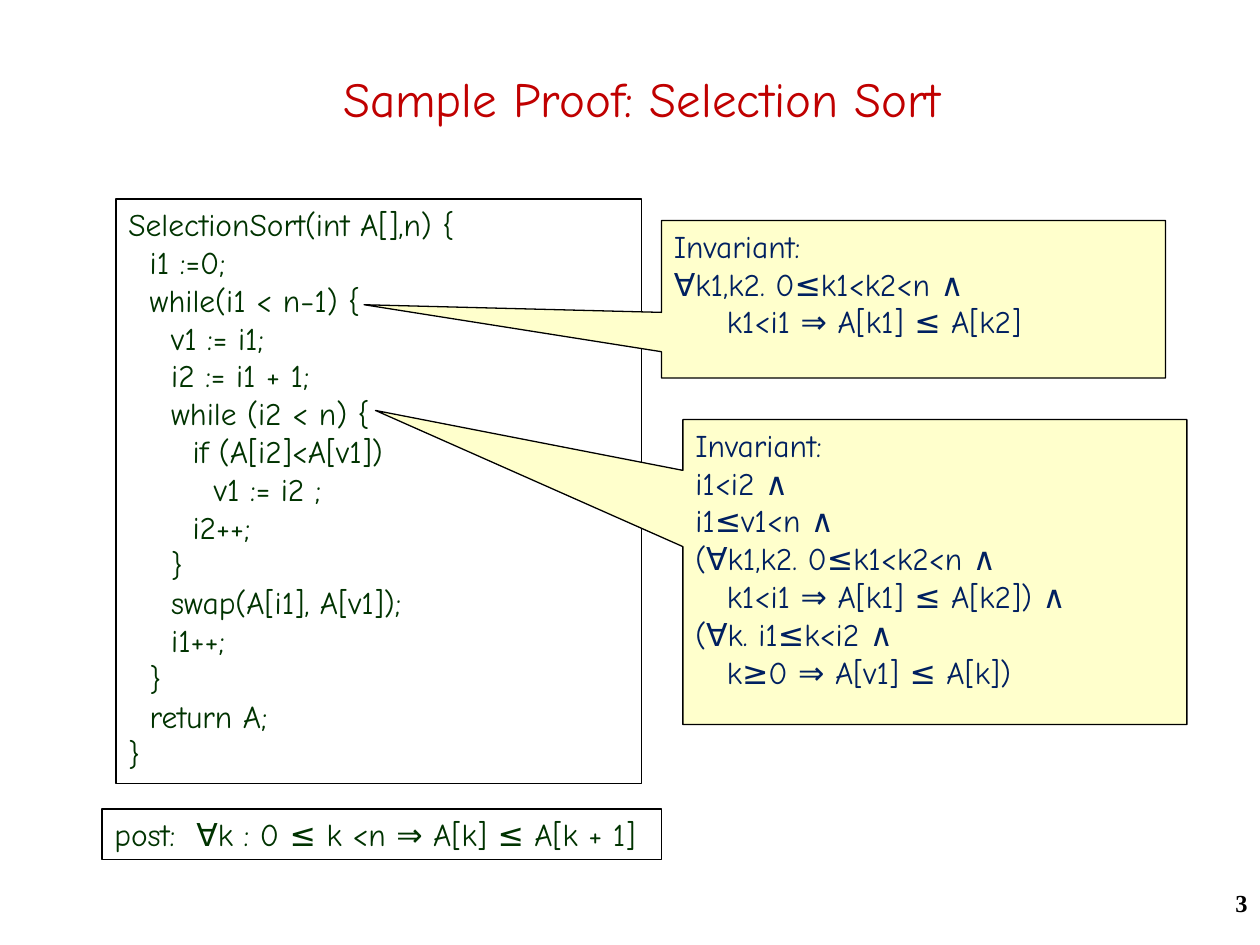
import pptx
import pptx.dml.color
import pptx.enum.shapes
import pptx.enum.text
import pptx.util
from pptx.util import Inches

SHAPES = pptx.enum.shapes.MSO_SHAPE
ALIGN = pptx.enum.text.PP_ALIGN
ANCHOR = pptx.enum.text.MSO_ANCHOR


def color(hex_string):
    return pptx.dml.color.RGBColor.from_string(hex_string)


def write_lines(shape, lines, size, text_color, font="Comic Neue", align=ALIGN.LEFT):
    """Fill a shape with (indent in inches, text) lines."""
    text_frame = shape.text_frame
    text_frame.word_wrap = True
    text_frame.vertical_anchor = ANCHOR.TOP
    text_frame.text = "\n".join(text for indent, text in lines)
    for paragraph, (indent, text) in zip(text_frame.paragraphs, lines):
        paragraph.alignment = align
        if indent:
            paragraph._p.get_or_add_pPr().set("marL", str(Inches(indent)))
        for run in paragraph.runs:
            run.font.size = pptx.util.Pt(size)
            run.font.name = font
            run.font.color.rgb = color(text_color)


presentation = pptx.Presentation()
presentation.slide_width = Inches(10)
presentation.slide_height = Inches(7.5)
slide = presentation.slides.add_slide(presentation.slide_layouts[6])

title = slide.shapes.add_textbox(Inches(0.19), Inches(0.18), Inches(9.81), Inches(1.2))
write_lines(title, [(0, "Sample Proof: Selection Sort")], 28, "C00000", align=ALIGN.CENTER)
title.text_frame.vertical_anchor = ANCHOR.MIDDLE

LEVEL = 0.17
code_lines = [
    (0, "SelectionSort(int A[],n) {"),
    (1, "i1 :=0;"),
    (1, "while(i1 < n−1) {"),
    (2, "v1 := i1;"),
    (2, "i2 := i1 + 1;"),
    (2, "while (i2 < n) {"),
    (3, "if (A[i2]<A[v1])"),
    (4, "v1 := i2 ;"),
    (3, "i2++;"),
    (2, "}"),
    (2, "swap(A[i1], A[v1]);"),
    (2, "i1++;"),
    (1, "}"),
    (1, "return A;"),
    (0, "}"),
]
code = [(level * LEVEL, text) for level, text in code_lines]
postcondition = [(0, "post:  ∀k : 0 ≤ k <n ⇒ A[k] ≤ A[k + 1]")]
outer_invariant = [
    (0, "Invariant:"),
    (0, "∀k1,k2. 0≤k1<k2<n ∧"),
    (0.42, "k1<i1 ⇒ A[k1] ≤ A[k2]"),
]
inner_invariant = [
    (0, "Invariant:"),
    (0, "i1<i2 ∧"),
    (0, "i1≤v1<n ∧"),
    (0, "(∀k1,k2. 0≤k1<k2<n ∧"),
    (0.25, "k1<i1 ⇒ A[k1] ≤ A[k2]) ∧"),
    (0, "(∀k. i1≤k<i2 ∧"),
    (0.25, "k≥0 ⇒ A[v1] ≤ A[k])"),
]

# Position and size, lines, and the callout tip relative to the box centre
boxes = [
    ((0.92, 1.58, 4.17, 4.64), code, None),
    ((0.81, 6.42, 4.44, 0.4), postcondition, None),
    ((5.25, 1.75, 4, 1.25), outer_invariant, (-1.09, 0.035)),
    ((5.42, 3.33, 4, 2.42), inner_invariant, (-1.11, -0.53)),
]
for bounds, lines, tip in boxes:
    kind = SHAPES.RECTANGULAR_CALLOUT if tip else SHAPES.RECTANGLE
    box = slide.shapes.add_shape(kind, *map(Inches, bounds))
    box.shadow.inherit = False
    box.line.color.rgb = color("000000")
    box.line.width = pptx.util.Pt(0.75)
    if tip:
        box.adjustments[0], box.adjustments[1] = tip
        box.fill.solid()
        box.fill.fore_color.rgb = color("FFFFCC")
    else:
        box.fill.background()
    write_lines(box, lines, 18, "002060" if tip else "003300")

page_number = slide.shapes.add_textbox(Inches(7.92), Inches(7), Inches(2.08), Inches(0.5))
write_lines(page_number, [(0, "3")], 14, "000000", "Times New Roman", ALIGN.RIGHT)
page_number.text_frame.paragraphs[0].runs[0].font.bold = True

presentation.save("out.pptx")
